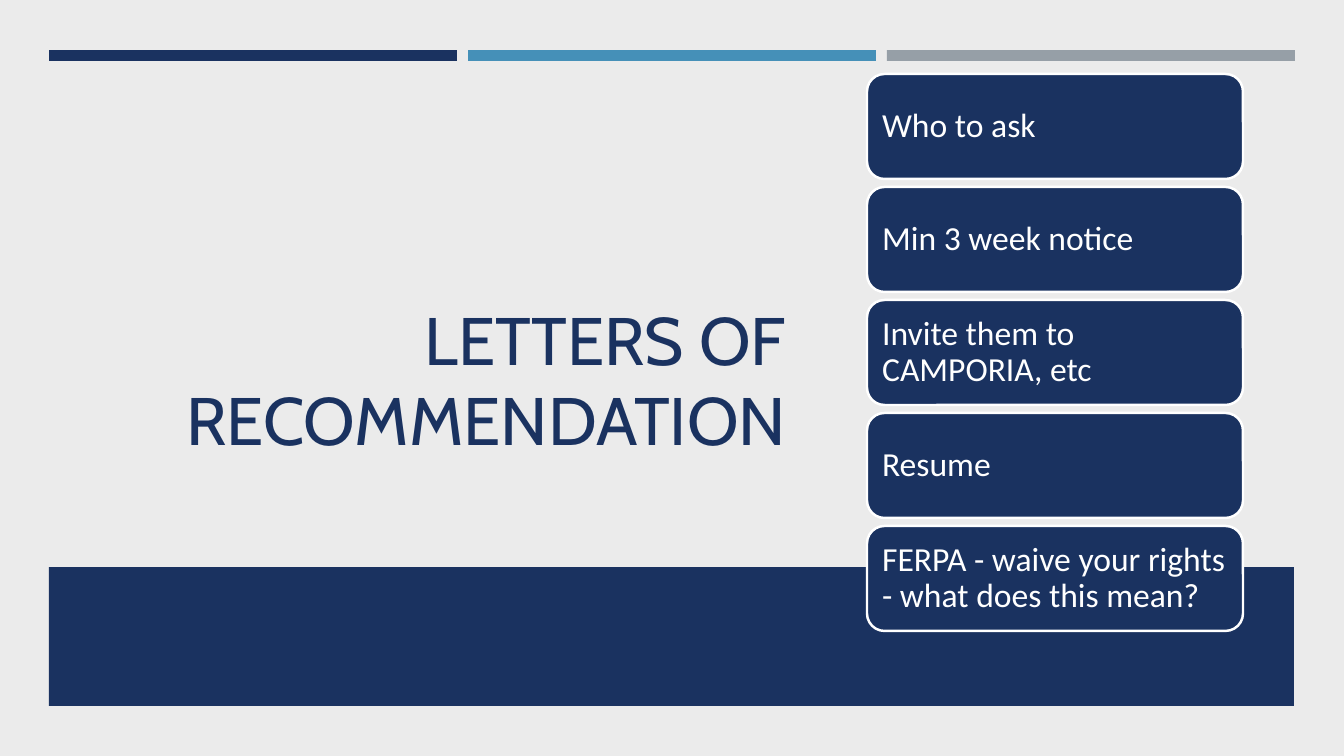
from pptx import Presentation
from pptx.dml.color import RGBColor
from pptx.enum.shapes import MSO_SHAPE
from pptx.enum.text import MSO_ANCHOR, PP_ALIGN
from pptx.util import Pt

RECT, ROUND = MSO_SHAPE.RECTANGLE, MSO_SHAPE.ROUNDED_RECTANGLE
LEFT, RIGHT = PP_ALIGN.LEFT, PP_ALIGN.RIGHT
MIDDLE = MSO_ANCHOR.MIDDLE
PX = 914400 / 100.8
NAVY, BLUE, GREY, WHITE = "1A3260", "4590B8", "969FA7", "FFFFFF"


def add_block(kind, x, y, w, h, color):
    sp = s.shapes.add_shape(kind, *(round(v * PX) for v in (x, y, w, h)))
    sp.shadow.inherit = False
    sp.fill.solid()
    sp.fill.fore_color.rgb = RGBColor.from_string(color)
    sp.line.fill.background()
    return sp


def set_text(sp, text, margin, align, spacing, font, size, color):
    tf = sp.text_frame
    frame = dict(word_wrap=True, vertical_anchor=MIDDLE, margin_left=margin, margin_right=margin,
                 margin_top=margin, margin_bottom=margin)
    for name, value in frame.items():
        setattr(tf, name, value)
    p = tf.paragraphs[0]
    p.alignment, p.line_spacing = align, spacing
    r = p.add_run()
    r.text = text
    r.font.name, r.font.size = font, Pt(size)
    r.font.color.rgb = RGBColor.from_string(color)


prs = Presentation()
prs.slide_width, prs.slide_height = round(1344 * PX), round(756 * PX)
s = prs.slides.add_slide(prs.slide_layouts[6])
s.background.fill.solid()
s.background.fill.fore_color.rgb = RGBColor.from_string("EBEBEB")

# Top bars and bottom band
for i, color in enumerate((NAVY, BLUE, GREY)):
    add_block(RECT, 49 + 419 * i, 50, 408, 11, color)
add_block(RECT, 49, 567, 1245, 139, NAVY)

# Title
title = s.shapes.add_textbox(*(round(v * PX) for v in (119, 136, 677, 485)))
set_text(title, "LETTERS OF RECOMMENDATION", round(10 * PX), RIGHT, 1.0, "Cabin", 48, NAVY)

# Topic cards
topics = ("Who to ask", "Min 3 week notice", "Invite them to CAMPORIA, etc", "Resume",
          "FERPA - waive your rights - what does this mean?")
for i, topic in enumerate(topics):
    card = add_block(ROUND, 867, 74 + 113 * i, 376, 105, NAVY)
    card.line.color.rgb = RGBColor.from_string(WHITE)
    card.line.width = Pt(1.75)
    set_text(card, topic, round(10 * PX), LEFT, 0.9, "Calibri", 24, WHITE)

prs.save("out.pptx")
